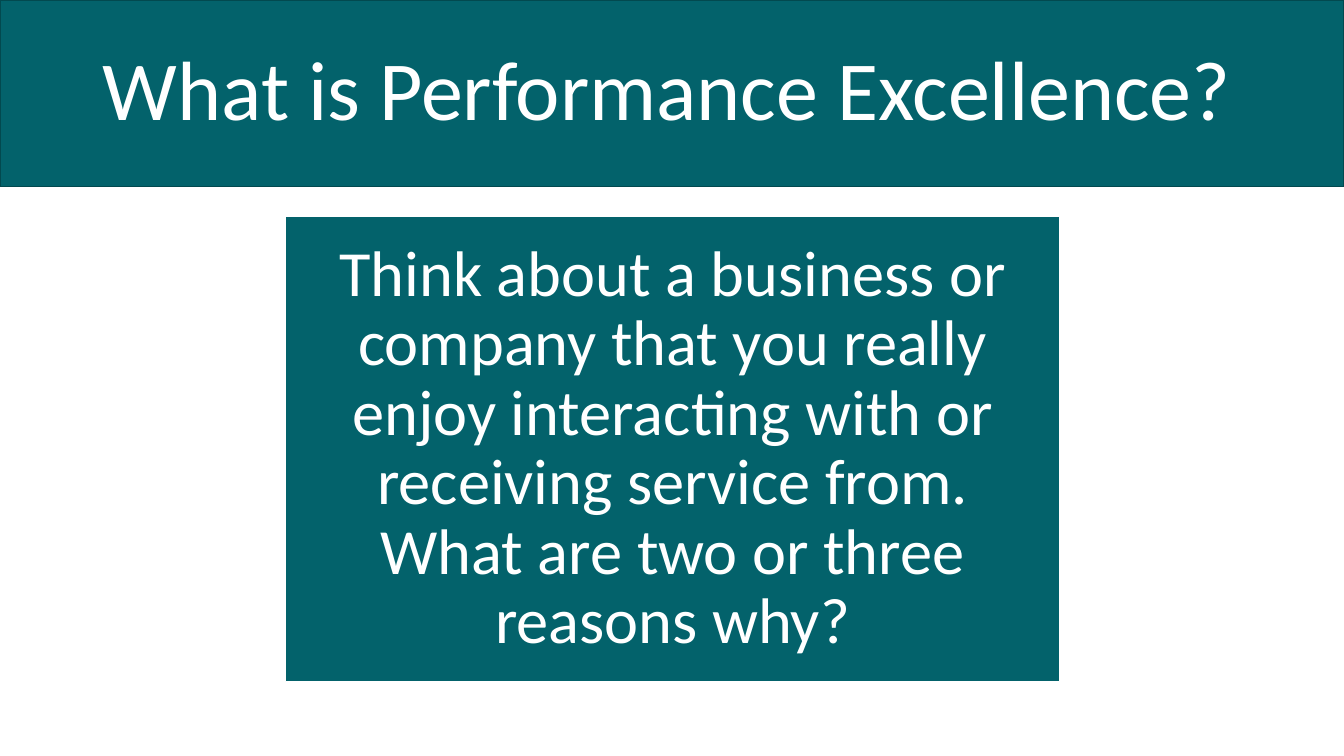
from pptx import Presentation
from pptx.dml.color import RGBColor
from pptx.enum import shapes, text
from pptx.util import Inches, Pt

TEAL = RGBColor(0x03, 0x62, 0x6B)
DARK = RGBColor(0x02, 0x49, 0x4F)
WHITE = RGBColor(0xFF, 0xFF, 0xFF)
FONT = "Calibri"


def add_panel(slide, box, edge):
    panel = slide.shapes.add_shape(
        shapes.MSO_SHAPE.RECTANGLE, *[Inches(n) for n in box])
    panel.shadow.inherit = False
    panel.fill.solid()
    panel.fill.fore_color.rgb = TEAL
    panel.line.color.rgb = edge
    panel.line.width = Pt(1)
    return panel


def write(shape, words, size, align, inset):
    frame = shape.text_frame
    frame.word_wrap = True
    frame.auto_size = text.MSO_AUTO_SIZE.NONE
    frame.vertical_anchor = text.MSO_ANCHOR.MIDDLE
    frame.margin_left = frame.margin_right = Inches(inset[0])
    frame.margin_top = frame.margin_bottom = Inches(inset[1])
    para = frame.paragraphs[0]
    para.alignment = align
    para.line_spacing = 0.9
    run = para.add_run()
    run.text = words
    run.font.name = FONT
    run.font.size = Pt(size)
    run.font.color.rgb = WHITE


def set_title(slide, words, box):
    title = slide.shapes.title
    title.left, title.top, title.width, title.height = [Inches(n) for n in box]
    write(title, words, 60, text.PP_ALIGN.LEFT, (0.1, 0.05))
    return title


def main():
    deck = Presentation()
    deck.slide_width = Inches(13.33)
    deck.slide_height = Inches(7.5)
    slide = deck.slides.add_slide(deck.slide_layouts.get_by_name("Title Only"))

    band = add_panel(slide, (0, 0, 13.33, 1.85), DARK)
    title = set_title(slide, "What is Performance Excellence?",
                      (0.92, 0.2, 11.5, 1.45))
    title.element.addprevious(band.element)

    prompt = add_panel(slide, (2.83, 2.15, 7.68, 4.61), WHITE)
    write(prompt,
          "Think about a business or company that you really enjoy "
          "interacting with or receiving service from. "
          "What are two or three reasons why?",
          46, text.PP_ALIGN.CENTER, (0.19, 0.19))

    deck.save("out.pptx")


if __name__ == "__main__":
    main()
